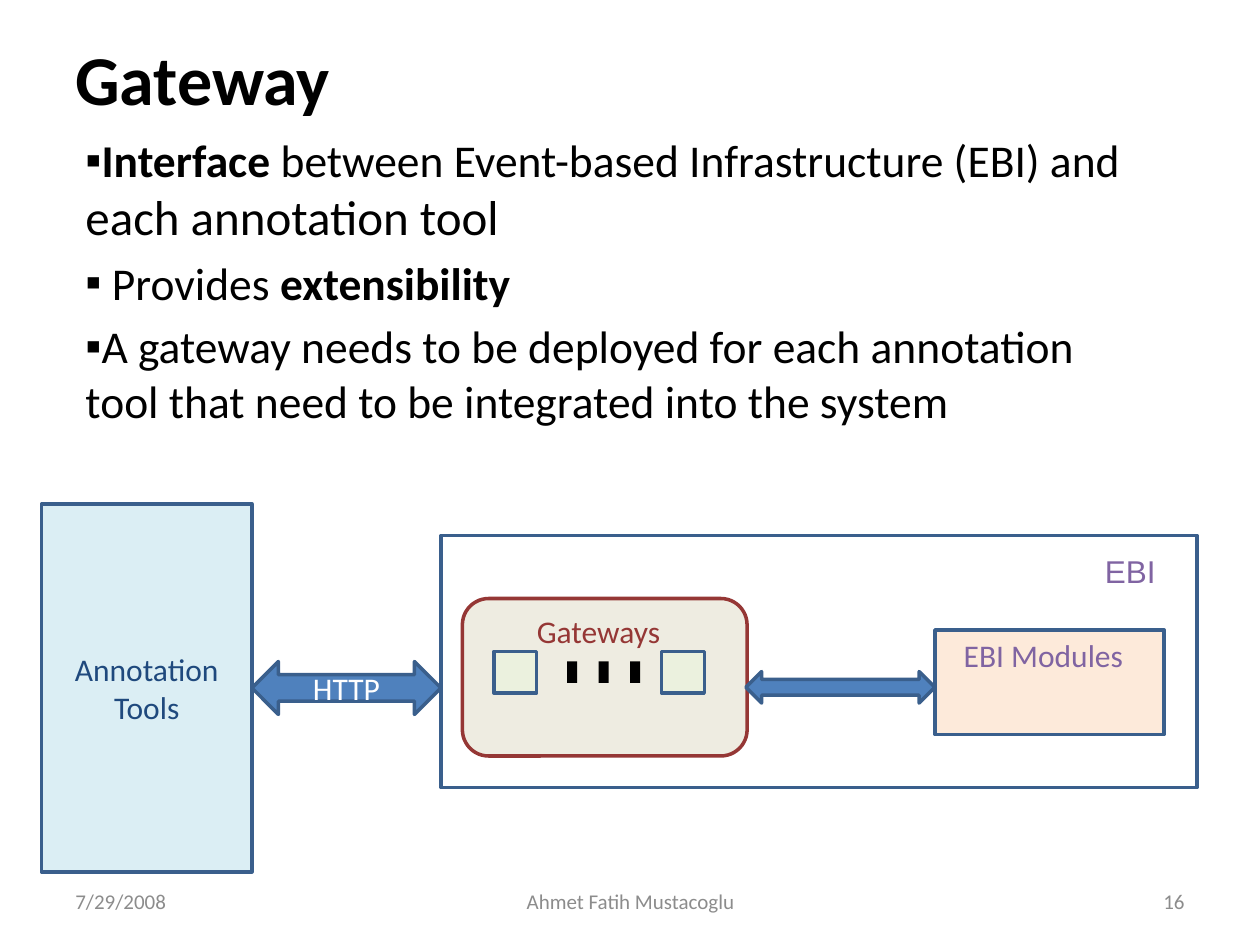
from dataclasses import dataclass

from lxml import etree
from pptx import Presentation
from pptx import util as u
from pptx.dml.color import RGBColor
from pptx.enum import shapes as s, text as t
from pptx.oxml.ns import qn

COLORS = {
    "black": "000000", "white": "FFFFFF", "grey": "8C8C8C",
    "outline": "3A5F8C", "arrow": "4F81BD", "navy": "1F497D",
    "purple": "8064A2", "red": "953735", "beige": "EEECE1",
    "green": "EBF1DE", "peach": "FDEADA", "sky": "DBEEF4",
}
RECTANGLE = s.MSO_SHAPE.RECTANGLE
ROUNDED = s.MSO_SHAPE.ROUNDED_RECTANGLE
ARROW = s.MSO_SHAPE.LEFT_RIGHT_ARROW
TOP, MIDDLE, BOTTOM = t.MSO_ANCHOR.TOP, t.MSO_ANCHOR.MIDDLE, t.MSO_ANCHOR.BOTTOM
LEFT, CENTER, RIGHT = t.PP_ALIGN.LEFT, t.PP_ALIGN.CENTER, t.PP_ALIGN.RIGHT

Box = tuple[float, float, float, float]


@dataclass
class Run:
    text: str
    size: float = 18
    color: str = "black"
    bold: bool = False
    font: str = "Calibri"


@dataclass
class Block:
    box: Box
    fill: str | None = None
    line: str | None = "outline"
    kind: s.MSO_SHAPE = RECTANGLE
    label: Run | None = None
    anchor: t.MSO_ANCHOR = MIDDLE
    left_inset: float = 0.1


@dataclass
class Label:
    box: Box
    run: Run
    align: t.PP_ALIGN = LEFT
    anchor: t.MSO_ANCHOR = MIDDLE


def rgb(name: str) -> RGBColor:
    return RGBColor.from_string(COLORS[name])


def add_runs(paragraph, runs: list[Run], align: t.PP_ALIGN) -> None:
    paragraph.alignment = align
    for item in runs:
        run = paragraph.add_run()
        run.text = item.text
        run.font.name = item.font
        run.font.size = u.Pt(item.size)
        run.font.bold = item.bold
        run.font.color.rgb = rgb(item.color)


def draw_block(shapes, block: Block) -> None:
    shape = shapes.add_shape(block.kind, *map(u.Inches, block.box))
    shape.shadow.inherit = False
    if block.fill:
        shape.fill.solid()
        shape.fill.fore_color.rgb = rgb(block.fill)
    else:
        shape.fill.background()
    if block.line:
        shape.line.color.rgb = rgb(block.line)
        shape.line.width = u.Pt(2)
    else:
        shape.line.fill.background()
    if block.label:
        frame = shape.text_frame
        frame.word_wrap = True
        frame.vertical_anchor = block.anchor
        frame.margin_left = u.Inches(block.left_inset)
        add_runs(frame.paragraphs[0], [block.label], CENTER)


def add_frame(slide, box: Box, anchor: t.MSO_ANCHOR):
    frame = slide.shapes.add_textbox(*map(u.Inches, box)).text_frame
    frame.word_wrap = True
    frame.vertical_anchor = anchor
    return frame


def draw_label(slide, label: Label) -> None:
    frame = add_frame(slide, label.box, label.anchor)
    add_runs(frame.paragraphs[0], [label.run], label.align)


def draw_bullets(slide, box: Box, items: list[list[Run]]) -> None:
    frame = add_frame(slide, box, TOP)
    for index, runs in enumerate(items):
        paragraph = frame.add_paragraph() if index else frame.paragraphs[0]
        add_runs(paragraph, runs, LEFT)
        paragraph.space_before = u.Pt(5.2)
        properties = paragraph._p.get_or_add_pPr()
        properties.set("marL", "0")
        properties.set("indent", "0")
        etree.SubElement(properties, qn("a:buFont")).set("typeface", "Arial")
        etree.SubElement(properties, qn("a:buChar")).set("char", "▪")


BULLETS = [
    [Run("Interface", 26, bold=True),
     Run(" between Event-based Infrastructure (EBI) and ", 26),
     Run("each annotation tool", 28)],
    [Run(" Provides ", 26), Run("extensibility", 26, bold=True)],
    [Run("A gateway needs to be deployed for each annotation tool "
         "that need to be integrated into the system", 26)],
]

# Gateways panel: two gateways with three dots between them
GATEWAYS = [
    Block((3.67, 4.75, 2.26, 1.25), "beige", "red", ROUNDED,
          Run("Gateways", color="red"), TOP, 0),
    *[Block((left, 5.17, 0.34, 0.33), "green") for left in (3.92, 5.25)],
    *[Block((4.5 + 0.25 * dot, 5.25, 0.08, 0.17), "black", None)
      for dot in range(3)],
]

BLOCKS = [
    Block((7.42, 5, 1.82, 0.83), "peach",
          label=Run("EBI Modules", color="purple"), anchor=TOP, left_inset=0),
    Block((5.92, 5.33, 1.5, 0.25), "arrow", kind=ARROW),
    Block((3.5, 4.25, 6, 2)),
    Block((0.33, 4, 1.67, 2.92), "sky", label=Run("Annotation Tools", color="navy")),
    Block((2, 5.25, 1.5, 0.42), "arrow", kind=ARROW, label=Run("HTTP", color="white")),
]

LABELS = [
    Label((0.5, 0.3, 8.75, 0.7), Run("Gateway", 40, bold=True), anchor=BOTTOM),
    Label((8.67, 4.33, 0.75, 0.4), Run("EBI", color="purple", font="Arial"), anchor=TOP),
    # Footer
    Label((0.5, 6.95, 2.33, 0.4), Run("7/29/2008", 12, "grey")),
    Label((3.42, 6.95, 3.17, 0.4), Run("Ahmet Fatih Mustacoglu", 12, "grey"), CENTER),
    Label((7.17, 6.95, 2.33, 0.4), Run("16", 12, "grey"), RIGHT),
]


def main() -> None:
    presentation = Presentation()
    presentation.slide_width = u.Inches(10)
    presentation.slide_height = u.Inches(7.5)
    slide = presentation.slides.add_slide(presentation.slide_layouts[6])

    # Diagram
    group = slide.shapes.add_group_shape()
    for block in GATEWAYS:
        draw_block(group.shapes, block)
    for block in BLOCKS:
        draw_block(slide.shapes, block)

    # Text
    draw_bullets(slide, (0.58, 1, 8.58, 2.83), BULLETS)
    for label in LABELS:
        draw_label(slide, label)

    presentation.save("out.pptx")


if __name__ == "__main__":
    main()
